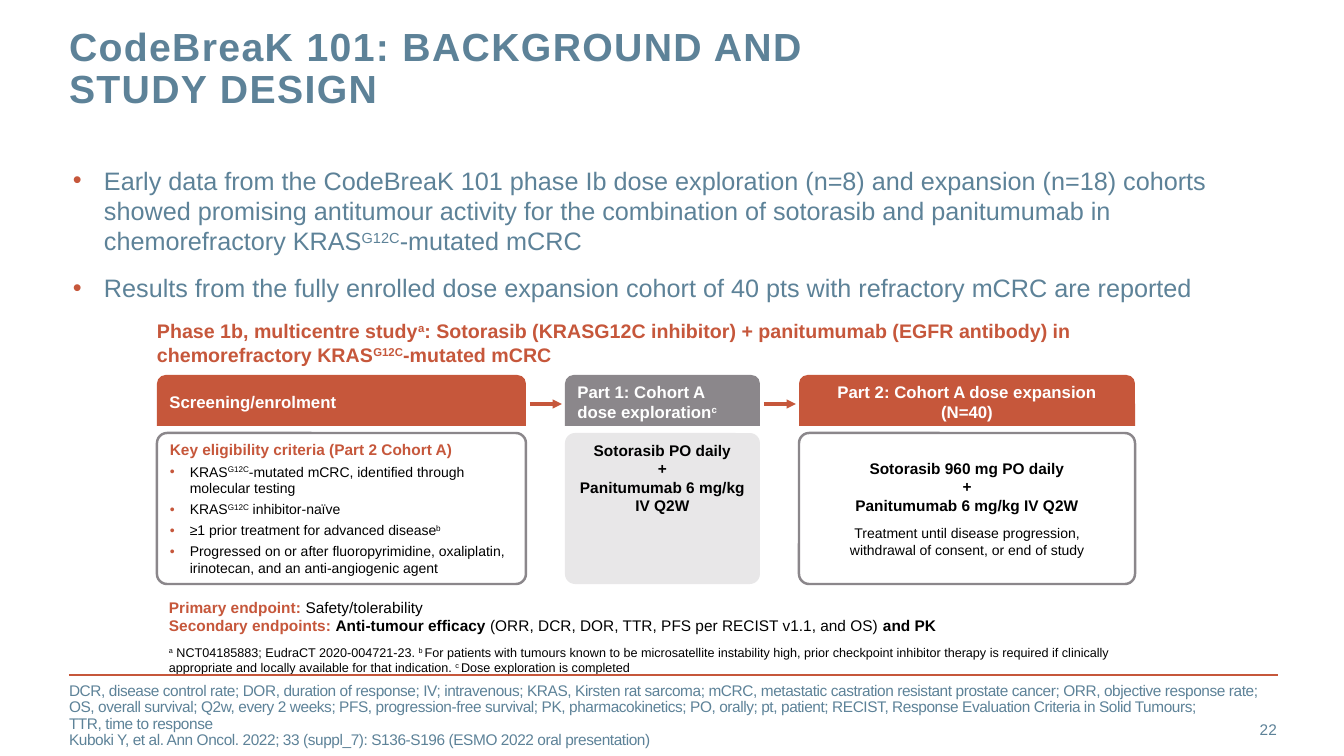
from lxml import etree
from pptx import Presentation, util
from pptx.dml.color import RGBColor
from pptx.enum import shapes, text
from pptx.oxml.ns import qn

EMU_PER_PX = 914400 / 100.8
SLATE, RUST, GREY, PALE = "5D8298", "C6573B", "8B878B", "E8E7E8"
WHITE, BLACK = "FFFFFF", "000000"
LEFT, CENTER, RIGHT = text.PP_ALIGN.LEFT, text.PP_ALIGN.CENTER, text.PP_ALIGN.RIGHT
TOP, MIDDLE = text.MSO_ANCHOR.TOP, text.MSO_ANCHOR.MIDDLE
color = RGBColor.from_string


def px(*lengths):
    """Turn pixel lengths into a list of EMU lengths."""
    return [util.Emu(round(length * EMU_PER_PX)) for length in lengths]


def write(frame, content, size, hue, bold=False, align=LEFT, before=0, after=0,
          indent=0, spacing=1.0, tracking=0):
    """Add a paragraph; ^ marks superscript on and off, a positive indent adds a bullet."""
    paragraph = frame.paragraphs[0]
    if paragraph.runs:
        paragraph = frame.add_paragraph()
    paragraph.alignment, paragraph.line_spacing = align, spacing
    paragraph.space_before, paragraph.space_after = util.Pt(before), util.Pt(after)
    properties = paragraph._p.get_or_add_pPr()
    hang = px(indent)[0]
    properties.set("marL", str(hang))
    properties.set("indent", str(-hang))
    if indent:
        bullet_color = etree.SubElement(properties, qn("a:buClr"))
        etree.SubElement(bullet_color, qn("a:srgbClr"), val=RUST)
        etree.SubElement(properties, qn("a:buFont"), typeface="Arial")
        etree.SubElement(properties, qn("a:buChar"), char="•")
    else:
        etree.SubElement(properties, qn("a:buNone"))
    font = paragraph.font
    font.name, font.size, font.bold = "Arial", util.Pt(size), bold
    font.color.rgb = color(hue)
    for part, stretch in enumerate(content.split("^")):
        for row, line in enumerate(stretch.split("\n")):
            if row:
                paragraph.add_line_break()
            if line:
                run = paragraph.add_run()
                run.text = line
                if part % 2:
                    run._r.get_or_add_rPr().set("baseline", "30000")
                if tracking:
                    run._r.get_or_add_rPr().set("spc", str(tracking))
    return paragraph


presentation = Presentation()
presentation.slide_width, presentation.slide_height = px(1344, 756)
slide = presentation.slides.add_slide(presentation.slide_layouts[3])
title, body, references = slide.placeholders

# Placeholders and text boxes
number, notes, heading, endpoints = [slide.shapes.add_textbox(0, 0, 0, 0) for _ in range(4)]
for shape, bounds, anchor, insets in [
    (title, (69, 27, 964, 89), TOP, (0, 0, 0, 0)),
    (body, (73, 165, 1209, 173), TOP, (0, 0, 0, 0)),
    (references, (69, 696, 1191, 40), MIDDLE, (0, 0, 0, 0)),
    (number, (1190, 709, 87, 40), MIDDLE, (0, 0, 0, 0)),
    (notes, (169, 641, 1016, 38), TOP, (0, 4, 4, 4)),
    (heading, (157, 314, 1054, 57), TOP, (0, 5, 10, 5)),
    (endpoints, (169, 593, 936, 47), TOP, (0, 5, 10, 5)),
]:
    shape.left, shape.top, shape.width, shape.height = px(*bounds)
    frame = shape.text_frame
    frame.word_wrap, frame.auto_size = True, text.MSO_AUTO_SIZE.NONE
    frame.vertical_anchor = anchor
    (frame.margin_left, frame.margin_top,
     frame.margin_right, frame.margin_bottom) = px(*insets)

write(title.text_frame, "CodeBreaK 101: BACKGROUND AND\nSTUDY DESIGN", 28, SLATE,
      bold=True, spacing=util.Pt(30), tracking=100)
write(body.text_frame,
      "Early data from the CodeBreaK 101 phase Ib dose exploration (n=8) and expansion (n=18) "
      "cohorts showed promising antitumour activity for the combination of sotorasib and "
      "panitumumab in chemorefractory KRAS^G12C^-mutated mCRC", 18, SLATE, indent=31)
write(body.text_frame,
      "Results from the fully enrolled dose expansion cohort of 40 pts with refractory mCRC "
      "are reported", 18, SLATE, before=12, indent=31)
for reference in (
    "DCR, disease control rate; DOR, duration of response; IV; intravenous; KRAS, Kirsten rat "
    "sarcoma; mCRC, metastatic castration resistant prostate cancer; ORR, objective response "
    "rate; OS, overall survival; Q2w, every 2 weeks; PFS, progression-free survival; PK, "
    "pharmacokinetics; PO, orally; pt, patient; RECIST, Response Evaluation Criteria in Solid "
    "Tumours;\nTTR, time to response",
    "Kuboki Y, et al. Ann Oncol. 2022; 33 (suppl_7): S136-S196 (ESMO 2022 oral presentation)",
):
    write(references.text_frame, reference, 11, SLATE, spacing=0.9, tracking=-30)
write(number.text_frame, "22", 11, SLATE, align=RIGHT)
for note in (
    "^a^ NCT04185883; EudraCT 2020-004721-23. ^b ^For patients with tumours known to be "
    "microsatellite instability high, prior checkpoint inhibitor therapy is required if clinically",
    "appropriate and locally available for that indication. ^c ^Dose exploration is completed",
):
    write(notes.text_frame, note, 9, BLACK)
write(heading.text_frame,
      "Phase 1b, multicentre study^a^: Sotorasib (KRASG12C inhibitor) + panitumumab (EGFR "
      "antibody) in chemorefractory KRAS^G12C^-mutated mCRC", 14, RUST, bold=True, after=3)

endpoint_lines = write(endpoints.text_frame, "", 11, BLACK, after=3)
for words, hue, bold in [
    ("Primary endpoint: ", RUST, True),
    ("Safety/tolerability", BLACK, False),
    ("Secondary endpoints: ", RUST, True),
    ("Anti-tumour efficacy", BLACK, True),
    (" (ORR, DCR, DOR, TTR, PFS per RECIST v1.1, and OS) ", BLACK, False),
    ("and PK", BLACK, True),
]:
    if words.startswith("Secondary"):
        endpoint_lines.add_line_break()
    run = endpoint_lines.add_run()
    run.text, run.font.bold = words, bold
    run.font.color.rgb = color(hue)

# Study stages: a header tab above a card
frames = []
columns = [(157, 369), (565, 195), (799, 336)]
for (left, width), header_fill, header, align, card_fill, outline, anchor in [
    (columns[0], RUST, "Screening/enrolment", LEFT, WHITE, GREY, MIDDLE),
    (columns[1], GREY, "Part 1: Cohort A\ndose exploration^c^", LEFT, PALE, None, TOP),
    (columns[2], RUST, "Part 2: Cohort A dose expansion\n(N=40)", CENTER, WHITE, GREY, MIDDLE),
]:
    card = slide.shapes.add_shape(shapes.MSO_SHAPE.ROUNDED_RECTANGLE, *px(left, 433, width, 151))
    card.adjustments[0] = 0.067
    tab = slide.shapes.add_shape(shapes.MSO_SHAPE.ROUND_2_SAME_RECTANGLE,
                                 *px(left, 375, width, 51))
    for shape, fill, line, position in [(card, card_fill, outline, anchor),
                                        (tab, header_fill, None, MIDDLE)]:
        shape.shadow.inherit = False
        shape.fill.solid()
        shape.fill.fore_color.rgb = color(fill)
        if line:
            shape.line.color.rgb = color(line)
            shape.line.width = util.Pt(1.75)
        else:
            shape.line.fill.background()
        shape.text_frame.word_wrap = True
        shape.text_frame.vertical_anchor = position
    write(tab.text_frame, header, 12, WHITE, bold=True, align=align)
    frames.append(card.text_frame)

criteria, exploration, expansion = frames
write(criteria, "Key eligibility criteria (Part 2 Cohort A)", 11, RUST, bold=True, after=3)
for criterion in (
    "KRAS^G12C^-mutated mCRC, identified through molecular testing",
    "KRAS^G12C^ inhibitor-naïve",
    "≥1 prior treatment for advanced disease^b^",
    "Progressed on or after fluoropyrimidine, oxaliplatin, irinotecan, and an "
    "anti-angiogenic agent",
):
    write(criteria, criterion, 10, BLACK, after=3, indent=20)
write(exploration, "Sotorasib PO daily\n+\nPanitumumab 6 mg/kg\nIV Q2W", 11, BLACK,
      bold=True, align=CENTER, after=3)
write(expansion, "Sotorasib 960 mg PO daily\n+\nPanitumumab 6 mg/kg IV Q2W", 11, BLACK,
      bold=True, align=CENTER, after=3)
write(expansion, "Treatment until disease progression,\nwithdrawal of consent, or end of study",
      10, BLACK, align=CENTER, before=4, after=3)

# Footer rule, then arrows across the gaps between stages
lines = [(69, 1278, 675, 2, False)]
for (left, width), (next_left, _) in zip(columns, columns[1:]):
    lines.append((left + width + 4, next_left - 3, 404, 2.25, True))
for start, end, y, weight, arrow in lines:
    connector = slide.shapes.add_connector(shapes.MSO_CONNECTOR.STRAIGHT, *px(start, y, end, y))
    connector.line.color.rgb = color(RUST)
    connector.line.width = util.Pt(weight)
    if arrow:
        etree.SubElement(connector.line._get_or_add_ln(), qn("a:tailEnd"), type="triangle")
    etree.SubElement(connector._element.spPr, qn("a:effectLst"))

presentation.save("out.pptx")
